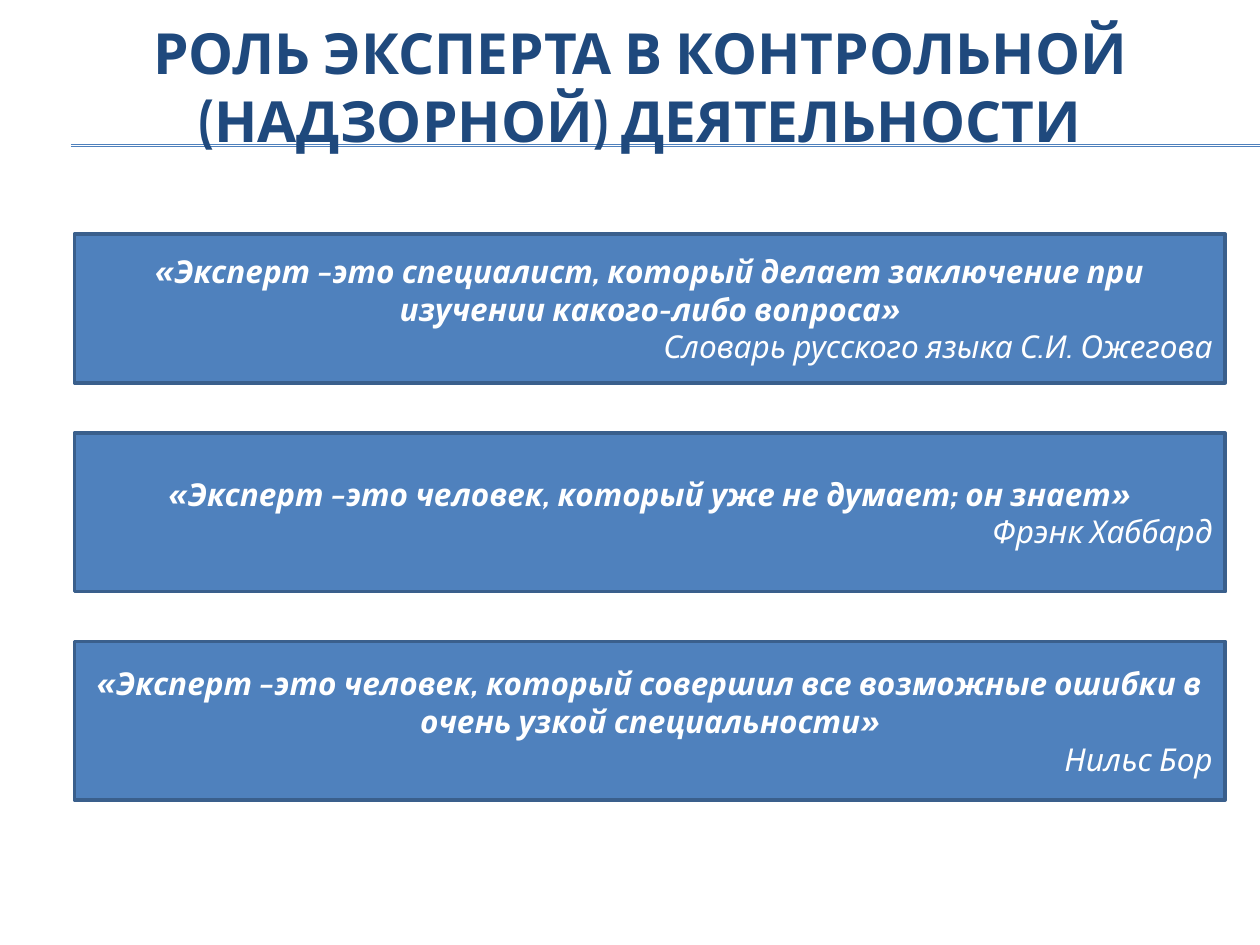
from lxml import etree
from pptx import Presentation
from pptx.dml.color import RGBColor
from pptx.enum.shapes import MSO_CONNECTOR, MSO_SHAPE
from pptx.enum.text import MSO_ANCHOR, PP_ALIGN
from pptx.oxml.ns import qn
from pptx.util import Cm, Pt

STRAIGHT = MSO_CONNECTOR.STRAIGHT
RECTANGLE = MSO_SHAPE.RECTANGLE
MIDDLE = MSO_ANCHOR.MIDDLE
CENTER = PP_ALIGN.CENTER
RIGHT = PP_ALIGN.RIGHT

BLUE = RGBColor(0x4F, 0x81, 0xBD)
DARK_BLUE = RGBColor(0x3A, 0x5F, 0x8C)
NAVY = RGBColor(0x1F, 0x49, 0x7D)
WHITE = RGBColor(0xFF, 0xFF, 0xFF)
FONT = "Cabin"

QUOTES = [
    (4.72, 3.0, "«Эксперт –это специалист, который делает заключение при изучении какого-либо вопроса»",
     "Словарь русского языка С.И. Ожегова"),
    (8.73, 3.2, "«Эксперт –это человек, который уже не думает; он знает»",
     "Фрэнк Хаббард"),
    (12.93, 3.2, "«Эксперт –это человек, который совершил все возможные ошибки в очень узкой специальности»",
     "Нильс Бор"),
]


def write_paragraph(paragraph, text, size, color, alignment, bold, italic):
    paragraph.text = text
    paragraph.alignment = alignment
    paragraph.font.name = FONT
    paragraph.font.size = Pt(size)
    paragraph.font.color.rgb = color
    paragraph.font.bold = bold
    paragraph.font.italic = italic


presentation = Presentation()
presentation.slide_width = Cm(25.4)
presentation.slide_height = Cm(19.05)
slide = presentation.slides.add_slide(presentation.slide_layouts[6])

for rule_top in (2.92, 2.95):
    rule = slide.shapes.add_connector(STRAIGHT, Cm(1.43), Cm(rule_top), Cm(25.4), Cm(rule_top))
    rule.line.color.rgb = BLUE
    rule.line.width = Pt(0.75)
    etree.SubElement(rule._element.spPr, qn("a:effectLst"))

title = slide.shapes.add_textbox(Cm(0.84), Cm(0.53), Cm(24.13), Cm(2.39))
title.text_frame.word_wrap = True
title.text_frame.vertical_anchor = MIDDLE
write_paragraph(title.text_frame.paragraphs[0], "РОЛЬ ЭКСПЕРТА В КОНТРОЛЬНОЙ (НАДЗОРНОЙ) ДЕЯТЕЛЬНОСТИ",
                32.4, NAVY, CENTER, True, False)

for top, height, quote, author in QUOTES:
    box = slide.shapes.add_shape(RECTANGLE, Cm(1.5), Cm(top), Cm(23.2), Cm(height))
    box.shadow.inherit = False
    box.fill.solid()
    box.fill.fore_color.rgb = BLUE
    box.line.color.rgb = DARK_BLUE
    box.line.width = Pt(2)
    frame = box.text_frame
    frame.word_wrap = True
    frame.vertical_anchor = MIDDLE
    write_paragraph(frame.paragraphs[0], quote, 18, WHITE, CENTER, True, True)
    write_paragraph(frame.add_paragraph(), author, 18, WHITE, RIGHT, False, True)

presentation.save("out.pptx")
